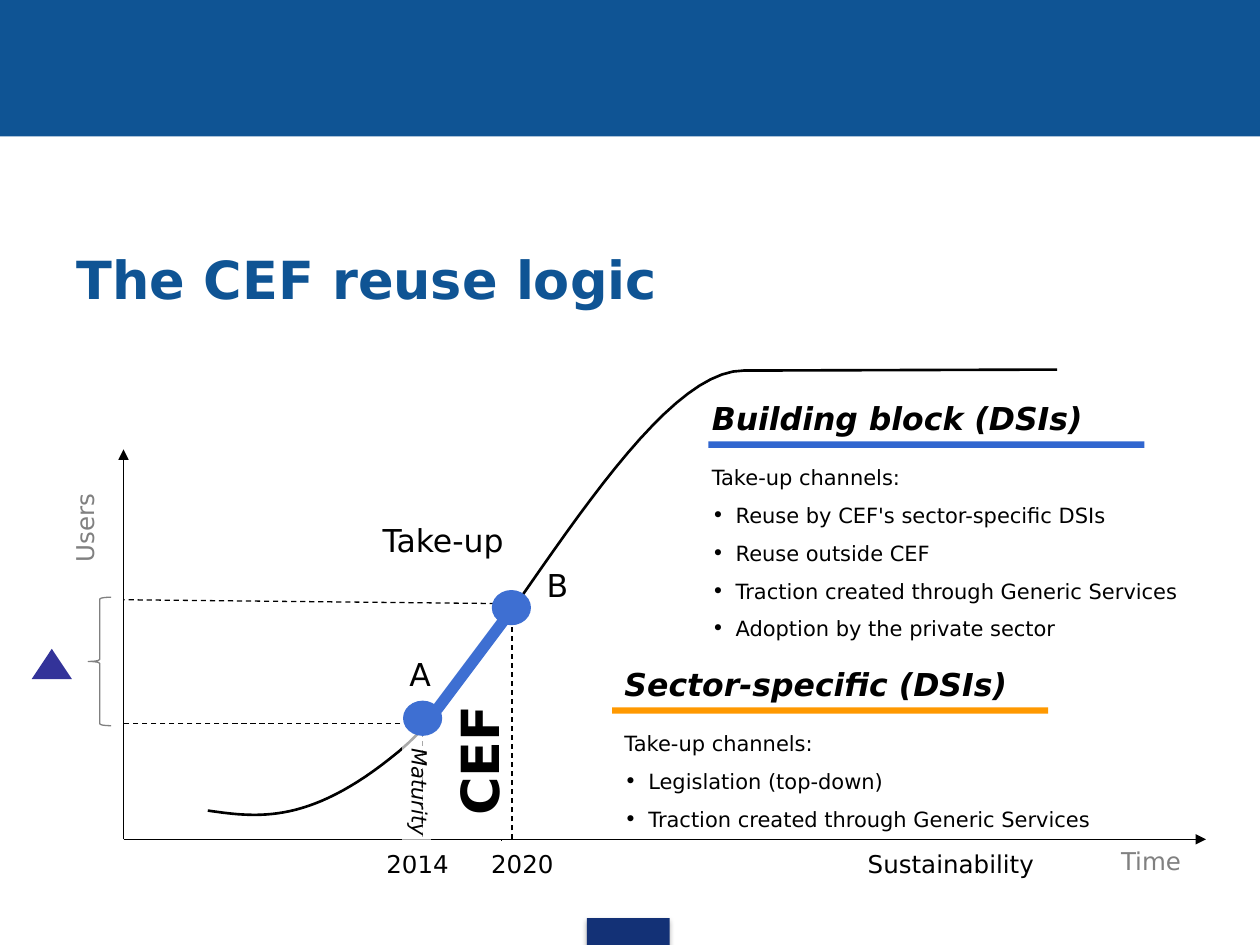
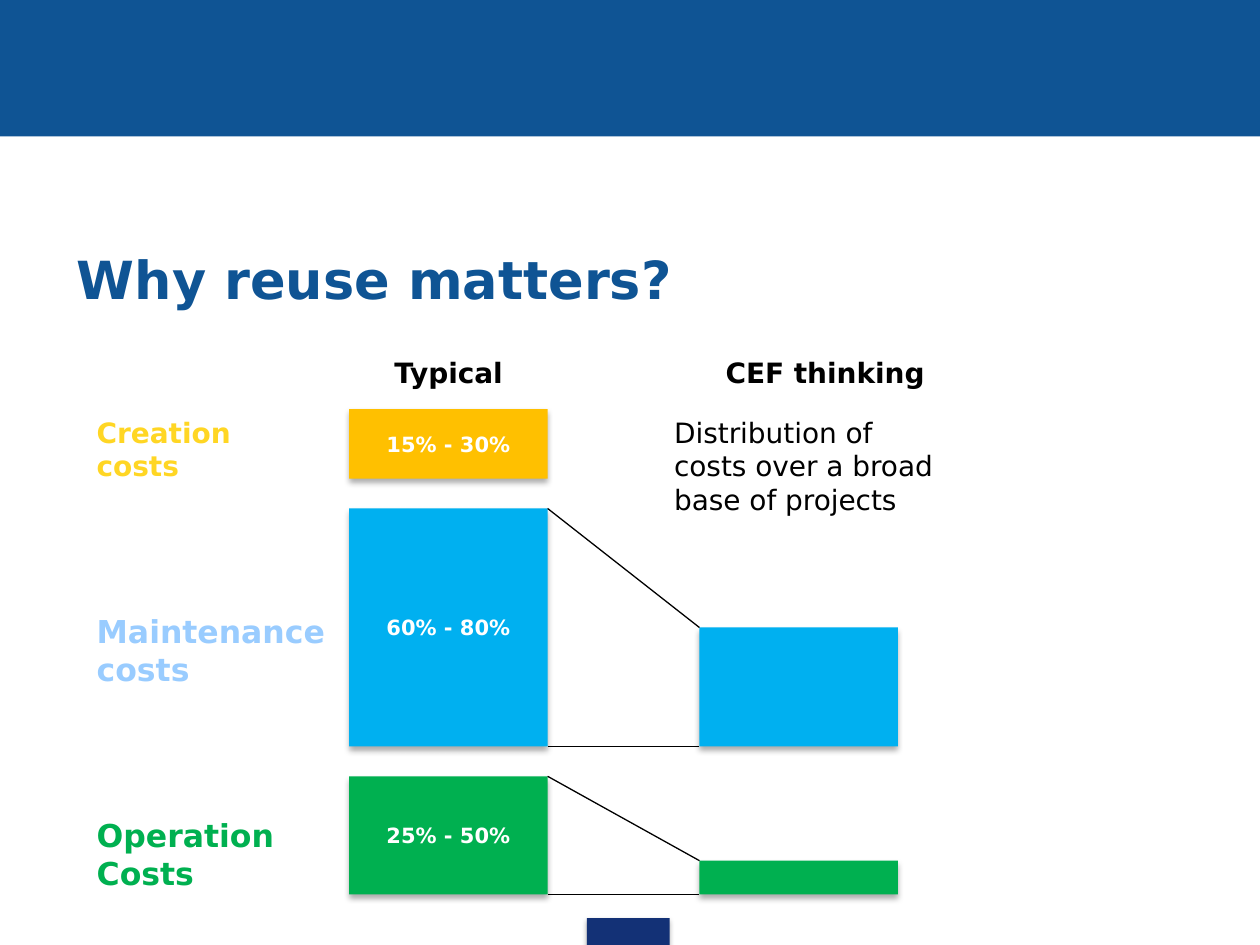
from lxml.etree import SubElement
from pptx import Presentation
from pptx.dml.color import RGBColor as Rgb
from pptx.enum.dml import MSO_LINE as Dash
from pptx.enum.shapes import MSO_CONNECTOR as Link, MSO_SHAPE as Kind
from pptx.enum.text import MSO_ANCHOR as Anchor, PP_ALIGN as Align
from pptx.oxml.ns import qn
from pptx.util import Cm, Pt

HUES = {
    "band": "0F5494", "tag": "133176", "white": "FFFFFF", "black": "000000",
    "grey": "808080", "dot": "3E6FD2", "delta": "333399", "block": "3166CF",
    "sector": "FF9900", "create": "FFC000", "maintain": "00B0F0",
    "operate": "00B050", "gold": "FFD624", "sky": "99CCFF",
}
FONT = "DejaVu Sans"


def hue(name):
    return Rgb.from_string(HUES[name])


def shift(box, dx, dy, w, h):
    """A box of its own size, offset from the corner of another."""
    return box[0] + dx, box[1] + dy, w, h


def write(shape, lines, size, color="black", bold=False, italic=False,
          align=Align.LEFT, space=None, anchor=Anchor.TOP):
    """Fill a shape with paragraphs; lines that start with • become bullets."""
    frame = shape.text_frame
    frame.word_wrap = True
    frame.vertical_anchor = anchor
    for i, line in enumerate(lines.split("\n")):
        para = frame.add_paragraph() if i else frame.paragraphs[0]
        para.text = line.lstrip("•")
        para.alignment = align
        if space:
            para.line_spacing = space
        if line.startswith("•"):
            props = para._p.get_or_add_pPr()
            props.set("marL", str(Cm(0.48)))
            props.set("indent", str(Cm(-0.48)))
            SubElement(props, qn("a:buFont")).set("typeface", FONT)
            SubElement(props, qn("a:buChar")).set("char", "•")
        look = para.font
        look.name, look.size = FONT, Pt(size)
        look.bold, look.italic = bold, italic
        look.color.rgb = hue(color)


def text(slide, box, lines, size, turn=0, **look):
    shape = slide.shapes.add_textbox(*map(Cm, box))
    shape.rotation = turn
    write(shape, lines, size, **look)


def solid(slide, box, color, kind=Kind.RECTANGLE):
    shape = slide.shapes.add_shape(kind, *map(Cm, box))
    shape.shadow.inherit = False
    shape.fill.solid()
    shape.fill.fore_color.rgb = hue(color)
    shape.line.fill.background()
    return shape


def shade(shape, alpha, blur, dist):
    """Drop a soft black shadow straight down."""
    drop = SubElement(shape.element.spPr.find(qn("a:effectLst")), qn("a:outerShdw"),
                      blurRad=str(Pt(blur)), dist=str(Pt(dist)), dir="5400000",
                      rotWithShape="0")
    tint = SubElement(drop, qn("a:srgbClr"), val=HUES["black"])
    SubElement(tint, qn("a:alpha"), val=str(alpha * 1000))


def stroke(slide, box, start, end, color="black", width=0.75, dash=False, arrow=False):
    """Draw a line between two points that are relative to the box."""
    ends = [Cm(box[i] + point[i]) for point in (start, end) for i in (0, 1)]
    line = slide.shapes.add_connector(Link.STRAIGHT, *ends)
    line.line.color.rgb = hue(color)
    line.line.width = Pt(width)
    if dash:
        line.line.dash_style = Dash.DASH
    props = line.element.spPr
    if arrow:
        SubElement(props.find(qn("a:ln")), qn("a:tailEnd"), type="triangle")
    SubElement(props, qn("a:effectLst"))


def base(deck, title):
    """A slide with the top band, the title and a plain footer block."""
    slide = deck.slides.add_slide(deck.slide_layouts[6])
    solid(slide, (0, 0, 25.4, 2.75), "band")
    shade(solid(slide, (11.83, 18.51, 1.67, 0.56), "tag"), 35, 3.1, 1.8)
    text(slide, (1.3, 4.32, 22.86, 2.59), title, 30, color="band", bold=True,
         anchor=Anchor.MIDDLE)
    return slide


def bend(a, b, c, d, steps=30):
    """Points along a cubic curve, without its start."""
    for i in range(1, steps + 1):
        t = i / steps
        u = 1 - t
        yield tuple(u**3 * p + 3 * u * u * t * q + 3 * u * t * t * r + t**3 * s
                    for p, q, r, s in zip(a, b, c, d))


def growth(slide, box):
    """The curve of users over time, ending in a plateau."""
    start, knee, top = (1.7, -0.58), (5.56, -1.78), (12.5, -9.45)
    points = [start,
              *bend(start, (2.74, -0.43), (3.78, -0.3), knee),
              *bend(knee, (7.37, -3.25), (10.39, -9.45), top),
              (18.82, -9.47)]
    spots = [(Cm(box[0] + x), Cm(box[1] + y)) for x, y in points]
    pen = slide.shapes.build_freeform(*spots[0])
    pen.add_line_segments(spots[1:], close=False)
    curve = pen.convert_to_shape()
    curve.shadow.inherit = False
    curve.fill.background()
    curve.line.color.rgb = hue("black")
    curve.line.width = Pt(1.5)


def plot(slide, box):
    """The chart of users over time; the box is where the axes meet and their reach."""
    wide, high = box[2:]
    first, last = (6.03, -2.44), (7.82, -4.67)

    def dot(point):
        w, h = 0.79, 0.71
        solid(slide, shift(box, point[0] - w / 2, point[1] - h / 2, w, h), "dot", Kind.OVAL)

    growth(slide, box)
    for start, end in (((6.02, -2.34), (6.02, 0)), ((7.83, 0), (7.83, -4.62)),
                       ((7.85, -4.75), (0, -4.83)), ((6.12, -2.34), (0, -2.34))):
        stroke(slide, box, start, end, dash=True)
    stroke(slide, box, (7.62, 0), (7.62, 0.03))
    for end in ((0, -high), (wide, 0)):
        stroke(slide, box, (0, 0), end, arrow=True)

    brace = solid(slide, shift(box, -0.71, -4.88, 0.46, 2.59), "white", Kind.LEFT_BRACE)
    brace.fill.background()
    brace.line.color.rgb = hue("grey")
    brace.line.width = Pt(0.75)
    solid(slide, shift(box, -1.85, -3.84, 0.81, 0.61), "delta", Kind.ISOSCELES_TRIANGLE)

    mid, tight = {"align": Align.CENTER}, {"space": 0.65}
    for word, place, size, look in (
            ("Time", (19.61, 0.2, 2.21, 0.64), 14, {**mid, **tight, "color": "grey"}),
            ("Users", (-2.46, -6.6, 3.51, 0.64), 14,
             {**mid, **tight, "color": "grey", "turn": 270}),
            ("2014", (5.05, 0.25, 2.16, 0.64), 14, tight),
            ("2020", (6.3, 0.25, 3.48, 0.64), 14, {**mid, **tight}),
            ("Sustainability", (13.16, 0.25, 7.04, 0.64), 14, {**mid, **tight}),
            ("Take-up", (4.5, -6.3, 3.89, 0.76), 18, {**mid, **tight}),
            ("A", (4.9, -3.84, 2.16, 1.02), 18, mid),
            ("B", (7.67, -5.64, 2.16, 1.02), 18, mid),
            ("CEF", (5.54, -2.36, 3.28, 1.55), 30, {**mid, "bold": True, "turn": 270})):
        text(slide, shift(box, *place), word, size, **look)

    veil = solid(slide, shift(box, 4.62, -1.24, 2.57, 0.58), "white")
    veil.rotation = 90
    tint = veil.element.spPr.find(qn("a:solidFill")).find(qn("a:srgbClr"))
    SubElement(tint, qn("a:alpha"), val="66000")
    write(veil, "Maturity", 12, italic=True, **mid, **tight)
    dot(first)
    dot(last)
    stroke(slide, box, (6.32, -2.62), (7.82, -4.62), "dot", 6.5)


def panel(slide, box, head, items, color, inset=0.0):
    """A heading with a coloured rule and its list of take-up channels."""
    wide, high = box[2:]
    text(slide, shift(box, 0, 0, 8.6, 1.02), head, 18, bold=True, italic=True)
    text(slide, shift(box, 0, 1.07, wide, high - 1.07),
         "\n•".join(["Take-up channels:", *items]), 12, space=1.5)
    solid(slide, shift(box, inset, 0.98, 8.79, 0.13), color)


def costs(slide, box):
    """Bars of typical costs, each joined to its smaller bar under CEF thinking."""
    wide, far, gap = 4, 7.06, 0.6
    for head, dx in (("Typical", -1.55), ("CEF thinking", 6.04)):
        text(slide, shift(box, dx, -1.21, 7.11, 0.94), head, 16, bold=True,
             align=Align.CENTER)
    text(slide, shift(box, 6.3, 0, 5.87, 2.31),
         "Distribution of costs over a broad base of projects", 16)
    top = 0
    for name, tone, size, room, drop, share, color, high, less in (
            ("Creation costs", "gold", 16, 3.73, 0, "15% - 30%", "create", 1.4, 0),
            ("Maintenance costs", "sky", 18, 5.41, 1.97, "60% - 80%", "maintain", 4.8, 2.4),
            ("Operation Costs", "operate", 18, 5.41, 0.68, "25% - 50%", "operate", 2.38, 0.68)):
        text(slide, shift(box, -5.34, top + drop, room, 1.8), name, size,
             color=tone, bold=True)
        bar = solid(slide, shift(box, 0, top, wide, high), color)
        shade(bar, 32, 3.5, 2.2)
        write(bar, share, 12, color="white", bold=True, align=Align.CENTER,
              anchor=Anchor.MIDDLE)
        foot = top + high
        if less:
            shade(solid(slide, shift(box, far, foot - less, wide, less), color), 32, 3.5, 2.2)
            stroke(slide, box, (wide, top), (far, foot - less))
            stroke(slide, box, (wide, foot), (far, foot))
        top = foot + gap


def main():
    deck = Presentation()
    deck.slide_width, deck.slide_height = Cm(25.4), Cm(19.05)

    logic = base(deck, "The CEF reuse logic")
    plot(logic, (2.49, 16.92, 21.82, 7.86))
    shared = "Traction created through Generic Services"
    panel(logic, (14.1, 7.92, 10.21, 5.18), "Building block (DSIs)",
          ["Reuse by CEF's sector-specific DSIs", "Reuse outside CEF", shared,
           "Adoption by the private sector"], "block", 0.18)
    panel(logic, (12.34, 13.28, 11.96, 3.64), "Sector-specific (DSIs)",
          ["Legislation (top-down)", shared], "sector")

    why = base(deck, "Why reuse matters?")
    costs(why, (7.04, 8.25, 11.06, 9.78))
    deck.save("out.pptx")


if __name__ == "__main__":
    main()
